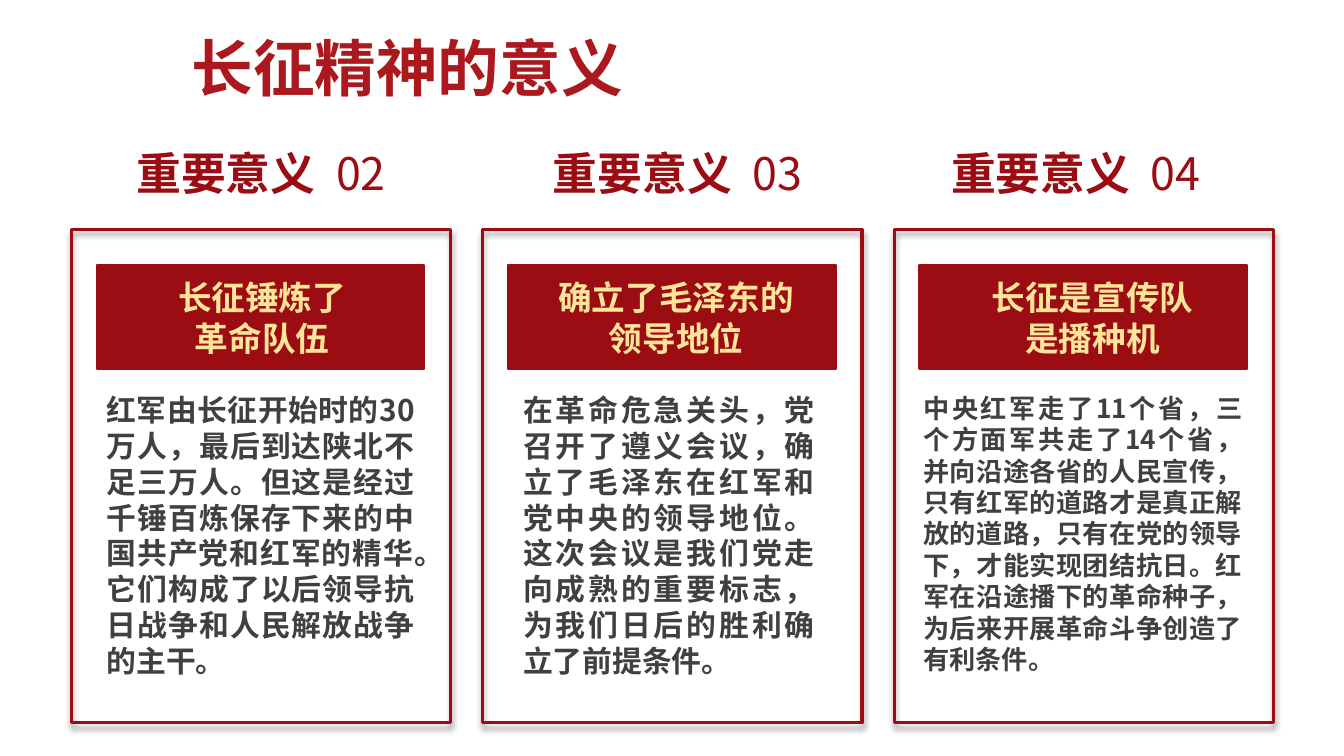
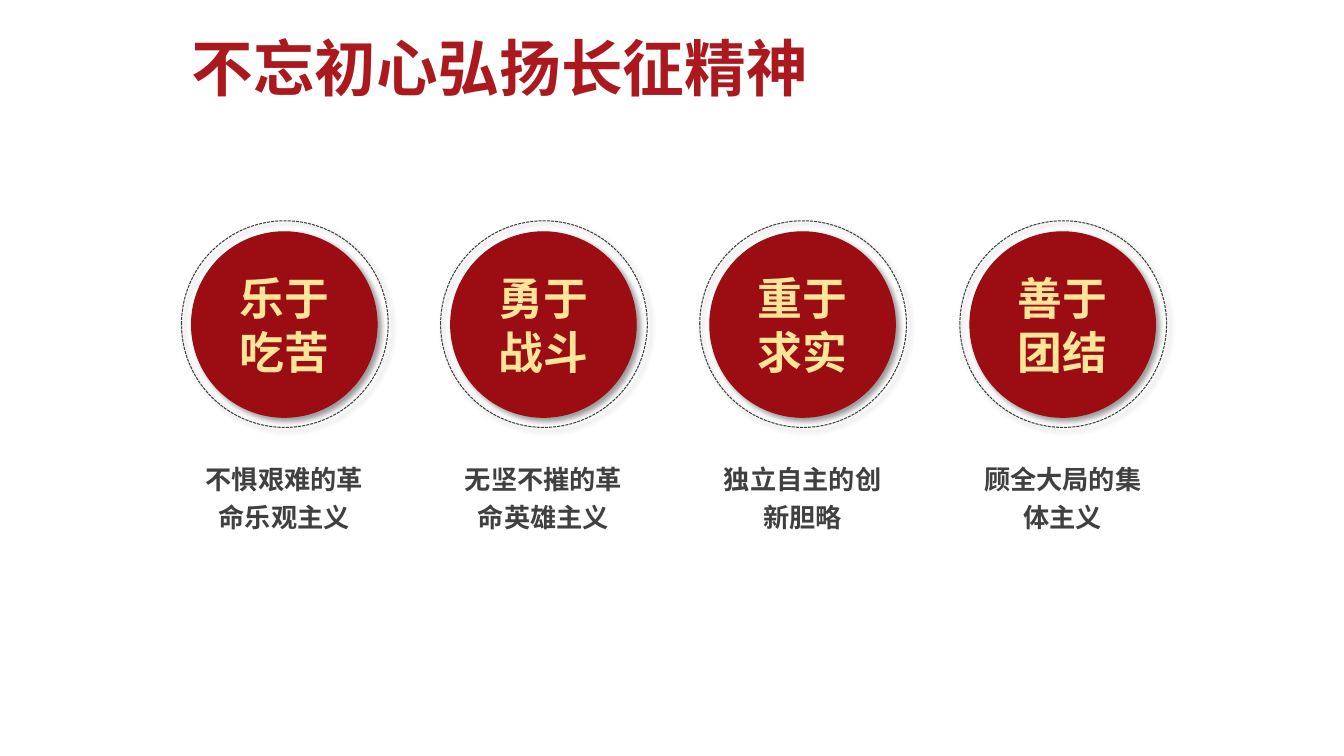
from dataclasses import dataclass
from typing import Optional

from lxml.etree import SubElement
from pptx import Presentation
from pptx.dml.color import RGBColor
from pptx.enum.dml import MSO_LINE
from pptx.enum.shapes import MSO_SHAPE
from pptx.enum.text import MSO_ANCHOR, MSO_AUTO_SIZE, PP_ALIGN
from pptx.oxml import parse_xml
from pptx.oxml.ns import nsdecls, qn
from pptx.util import Emu, Pt

# Shared style
EMU_PER_PX = 9144  # 100 px to the inch
FONT = "Noto Sans CJK SC"
TITLE_RED = "AB191F"
DEEP_RED = "9B0D13"
GOLD = "FFE599"
GREY = "404040"
WHITE = "FFFFFF"


@dataclass(frozen=True)
class Box:
    left: int
    top: int
    width: int
    height: int

    def emu(self) -> tuple:
        return tuple(px(value) for value in (self.left, self.top, self.width, self.height))


@dataclass(frozen=True)
class TextStyle:
    size: float
    color: str
    align: PP_ALIGN = PP_ALIGN.CENTER
    line_spacing: Optional[float] = None


@dataclass(frozen=True)
class Card:
    number: str
    heading: str
    body: str
    label_left: int
    heading_left: int
    heading_width: int
    body_left: int
    body_width: int
    body_size: float


@dataclass(frozen=True)
class Virtue:
    name: str
    caption: str


TITLE_STYLE = TextStyle(44, TITLE_RED, PP_ALIGN.LEFT)
LABEL_STYLE = TextStyle(32, DEEP_RED)
HEADING_STYLE = TextStyle(24, GOLD)
CIRCLE_STYLE = TextStyle(32, GOLD)
CAPTION_STYLE = TextStyle(18.7, GREY, line_spacing=1.2)

TITLE_BOX = Box(180, 25, 922, 84)
CARD_LEFT, CARD_STEP = 71, 408
RING_LEFT, RING_SPAN = 180, 772

CARDS = [
    Card("02", "长征锤炼了\n革命队伍",
         "红军由长征开始时的30万人，最后到达陕北不足三万人。但这是经过千锤百炼保存下来的"
         "中国共产党和红军的精华。它们构成了以后领导抗日战争和人民解放战争的主干。",
         81, 98, 324, 96, 325, 21.3),
    Card("03", "确立了毛泽东的\n领导地位",
         "在革命危急关头，党召开了遵义会议，确立了毛泽东在红军和党中央的领导地位。"
         "这次会议是我们党走向成熟的重要标志，为我们日后的胜利确立了前提条件。",
         494, 517, 307, 509, 309, 21.3),
    Card("04", "长征是宣传队\n是播种机",
         "中央红军走了11个省，三个方面军共走了14个省，并向沿途各省的人民宣传，"
         "只有红军的道路才是真正解放的道路，只有在党的领导下，才能实现团结抗日。"
         "红军在沿途播下的革命种子，为后来开展革命斗争创造了有利条件。",
         889, 925, 317, 906, 336, 18.7),
]

VIRTUES = [
    Virtue("乐于吃苦", "不惧艰难的革命乐观主义"),
    Virtue("勇于战斗", "无坚不摧的革命英雄主义"),
    Virtue("重于求实", "独立自主的创新胆略"),
    Virtue("善于团结", "顾全大局的集体主义"),
]


# Helpers
def px(value: int) -> Emu:
    return Emu(value * EMU_PER_PX)


def rgb(value: str) -> RGBColor:
    return RGBColor.from_string(value)


def format_run(run, style: TextStyle, bold: bool = True) -> None:
    run.font.size = Pt(style.size)
    run.font.bold = bold
    run.font.color.rgb = rgb(style.color)
    run.font.name = FONT
    SubElement(run.font._element, qn("a:ea")).set("typeface", FONT)


def format_text(text_frame, style: TextStyle) -> None:
    text_frame.word_wrap = True
    text_frame.auto_size = MSO_AUTO_SIZE.NONE
    for paragraph in text_frame.paragraphs:
        paragraph.alignment = style.align
        if style.line_spacing:
            paragraph.line_spacing = style.line_spacing
        for run in paragraph.runs:
            format_run(run, style)


def add_text(slide, box: Box, text: str, style: TextStyle):
    shape = slide.shapes.add_textbox(*box.emu())
    shape.text_frame.text = text
    format_text(shape.text_frame, style)
    return shape


def add_shape(slide, kind: MSO_SHAPE, box: Box, line: str, line_width: float,
              fill: Optional[str] = None, shadow_angle: Optional[int] = None):
    shape = slide.shapes.add_shape(kind, *box.emu())
    shape.shadow.inherit = False
    if fill:
        shape.fill.solid()
        shape.fill.fore_color.rgb = rgb(fill)
    else:
        shape.fill.background()
    shape.line.color.rgb = rgb(line)
    shape.line.width = Pt(line_width)
    if shadow_angle is not None:
        effects = shape._element.spPr.find(qn("a:effectLst"))
        effects.append(parse_xml(
            f'<a:outerShdw {nsdecls("a")} blurRad="{Pt(4)}" dist="{Pt(3)}" '
            f'dir="{shadow_angle * 60000}" algn="ctr" rotWithShape="0">'
            '<a:srgbClr val="000000"><a:alpha val="40000"/></a:srgbClr></a:outerShdw>'))
    return shape


def add_titled_slide(presentation, title: str):
    slide = presentation.slides.add_slide(presentation.slide_layouts[5])
    shape = slide.shapes.title
    shape.left, shape.top, shape.width, shape.height = TITLE_BOX.emu()
    text_frame = shape.text_frame
    text_frame.text = title
    format_text(text_frame, TITLE_STYLE)
    text_frame.vertical_anchor = MSO_ANCHOR.TOP
    outline = parse_xml(
        f'<a:ln {nsdecls("a")} w="{Pt(0.75)}"><a:solidFill>'
        f'<a:srgbClr val="{WHITE}"/></a:solidFill></a:ln>')
    text_frame.paragraphs[0].runs[0].font._element.insert(0, outline)
    return slide


# Slide parts
def add_label(slide, left: int, number: str) -> None:
    shape = add_text(slide, Box(left, 140, 356, 64), "重要意义", LABEL_STYLE)
    paragraph = shape.text_frame.paragraphs[0]
    gap = paragraph.add_run()
    gap.text = " "
    format_run(gap, LABEL_STYLE)
    gap.font._element.set("spc", "720")
    number_run = paragraph.add_run()
    number_run.text = number
    format_run(number_run, LABEL_STYLE, bold=False)


def add_card(slide, left: int, card: Card) -> None:
    add_label(slide, card.label_left, card.number)
    add_shape(slide, MSO_SHAPE.RECTANGLE, Box(left, 228, 376, 489), DEEP_RED, 2.25,
              shadow_angle=90)
    add_shape(slide, MSO_SHAPE.RECTANGLE, Box(left + 25, 263, 325, 103), DEEP_RED, 1.5,
              fill=DEEP_RED)
    add_text(slide, Box(card.heading_left, 270, card.heading_width, 91), card.heading,
             HEADING_STYLE)
    add_text(slide, Box(card.body_left, 384, card.body_width, 297), card.body,
             TextStyle(card.body_size, GREY, PP_ALIGN.JUSTIFY))


def add_virtue(slide, left: int, virtue: Virtue) -> None:
    circle = add_shape(slide, MSO_SHAPE.OVAL, Box(left + 10, 230, 184, 184), DEEP_RED, 0.75,
                       fill=DEEP_RED, shadow_angle=45)
    text_frame = circle.text_frame
    text_frame.text = virtue.name
    format_text(text_frame, CIRCLE_STYLE)
    text_frame.vertical_anchor = MSO_ANCHOR.MIDDLE
    text_frame.margin_left = text_frame.margin_right = px(13)
    text_frame.margin_top = text_frame.margin_bottom = px(7)
    ring = add_shape(slide, MSO_SHAPE.OVAL, Box(left, 219, 205, 205), GREY, 0.75,
                     shadow_angle=45)
    ring.line.dash_style = MSO_LINE.SQUARE_DOT
    add_text(slide, Box(left + 6, 449, 192, 86), virtue.caption, CAPTION_STYLE)


def main() -> None:
    presentation = Presentation()
    presentation.slide_width = px(1333)
    presentation.slide_height = px(750)

    # Significance cards
    slide = add_titled_slide(presentation, "长征精神的意义")
    for index, card in enumerate(CARDS):
        add_card(slide, CARD_LEFT + index * CARD_STEP, card)

    # Virtue circles
    slide = add_titled_slide(presentation, "不忘初心弘扬长征精神")
    for index, virtue in enumerate(VIRTUES):
        add_virtue(slide, RING_LEFT + index * RING_SPAN // (len(VIRTUES) - 1), virtue)

    presentation.save("out.pptx")


if __name__ == "__main__":
    main()
